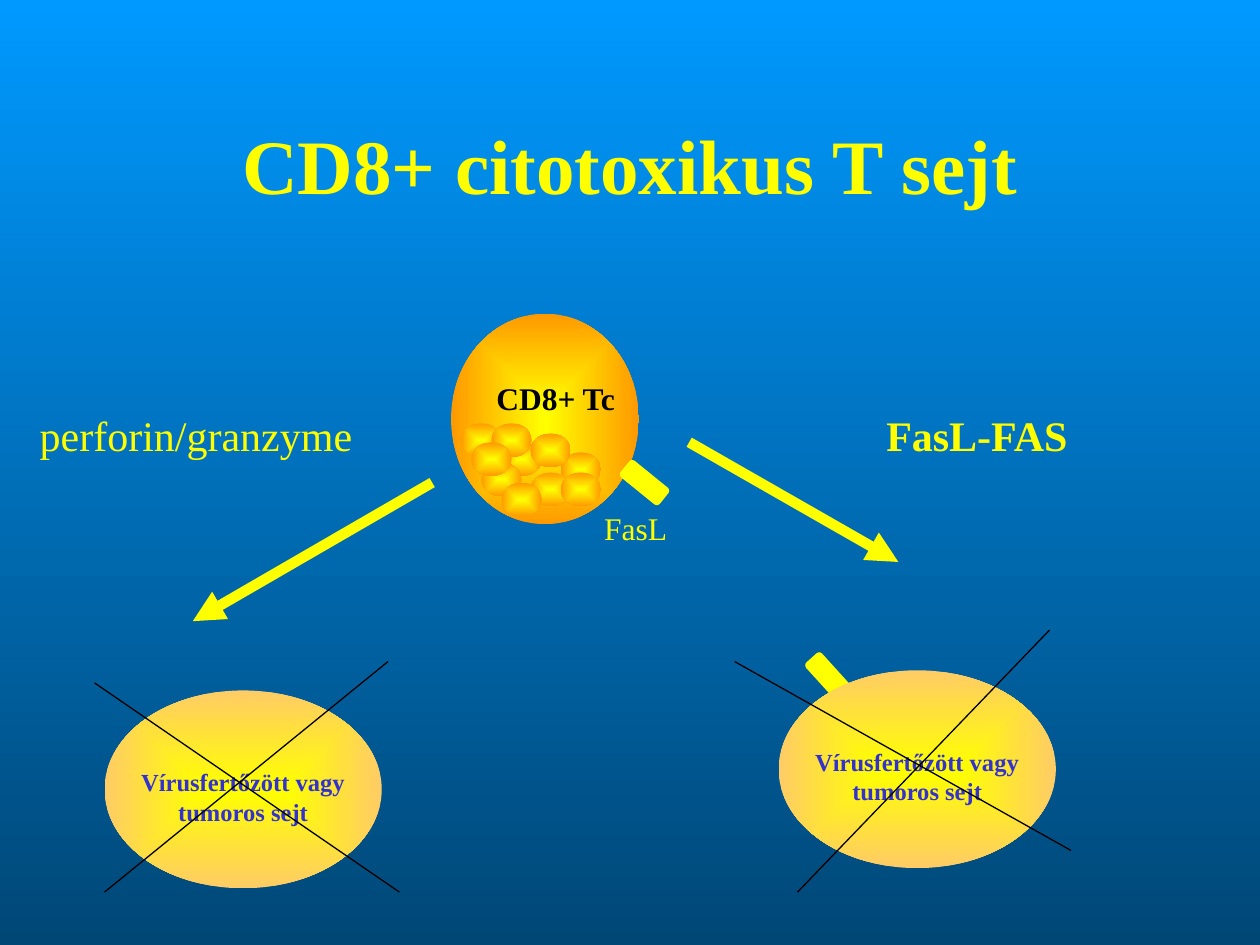
from dataclasses import dataclass

from lxml import etree
from pptx import Presentation
from pptx import util as u
from pptx.dml.color import RGBColor
from pptx.enum import shapes, text
from pptx.oxml.ns import qn

PX = 9144


@dataclass(frozen=True)
class Theme:
    """Holds the colours, font and type sizes of the slide."""
    font: str = "Times New Roman"
    sky: str = "0099FF"
    deep: str = "004776"
    yellow: str = "FFFF00"
    orange: str = "FF9900"
    peach: str = "FFCC66"
    blue: str = "3333CC"
    black: str = "000000"
    title: int = 44
    head: int = 24
    label: int = 18
    small: int = 14
    thin: float = 0.75
    thick: float = 6


def rgb(color):
    """Turn a hex string into a colour."""
    return RGBColor.from_string(color)


def px(*vals):
    """Scale whole px to EMU."""
    return [u.Emu(v * PX) for v in vals]


def blend(fill, *colors):
    """Give a fill a gradient of two colours."""
    fill.gradient()
    for stop, color in zip(fill.gradient_stops, colors):
        stop.color.rgb = rgb(color)


def write(frame, words, *, font, size, color, bold=False, anchor=text.MSO_ANCHOR.TOP):
    """Put one centred, formatted paragraph in a text frame."""
    frame.word_wrap = True
    frame.vertical_anchor = anchor
    para = frame.paragraphs[0]
    para.alignment = text.PP_ALIGN.CENTER
    run = para.add_run()
    run.text = words
    run.font.name = font
    run.font.size = u.Pt(size)
    run.font.bold = bold
    run.font.color.rgb = rgb(color)


class Board:
    """Draws each kind of element on the current slide."""

    def __init__(self, deck, theme):
        """Add a blank slide with a gradient background."""
        self.theme = theme
        self.slide = deck.slides.add_slide(deck.slide_layouts[6])
        fill = self.slide.background.fill
        blend(fill, theme.sky, theme.deep)
        fill.gradient_angle = 270

    def label(self, words, at, size, color, home=None, **form):
        """Add a text box."""
        box = (home or self.slide).shapes.add_textbox(*px(*at))
        write(box.text_frame, words, font=self.theme.font, size=size, color=color, **form)

    def ball(self, at, rim, home=None):
        """Add an ellipse that glows from its centre."""
        ball = (home or self.slide).shapes.add_shape(shapes.MSO_SHAPE.OVAL, *px(*at))
        ball.shadow.inherit = False
        ball.line.fill.background()
        blend(ball.fill, self.theme.yellow, rim)
        grad = ball._element.spPr.find(qn("a:gradFill"))
        grad.remove(grad.find(qn("a:lin")))
        glow = etree.SubElement(grad, qn("a:path"))
        glow.set("path", "shape")
        rect = etree.SubElement(glow, qn("a:fillToRect"))
        for side in "ltrb":
            rect.set(side, "50000")

    def stub(self, left, top, turn):
        """Add a turned receptor bar."""
        bar = self.slide.shapes.add_shape(
            shapes.MSO_SHAPE.ROUNDED_RECTANGLE, *px(left, top, 39, 16))
        bar.adjustments[0] = 0.167
        bar.rotation = turn
        bar.shadow.inherit = False
        bar.fill.solid()
        bar.fill.fore_color.rgb = rgb(self.theme.yellow)
        bar.line.color.rgb = rgb(self.theme.yellow)
        bar.line.width = u.Pt(self.theme.thin)

    def line(self, ends, color, width, head=False):
        """Add a straight line, with an arrowhead if asked."""
        line = self.slide.shapes.add_connector(shapes.MSO_CONNECTOR.STRAIGHT, *px(*ends))
        line.line.color.rgb = rgb(color)
        line.line.width = u.Pt(width)
        if head:
            etree.SubElement(line.line._get_or_add_ln(), qn("a:tailEnd")).set("type", "triangle")
        etree.SubElement(line._element.spPr, qn("a:effectLst"))

    def target(self, left, top):
        """Add a target cell grouped with its label."""
        group = self.slide.shapes.add_group_shape()
        self.ball((left, top, 220, 157), self.theme.peach, home=group)
        self.label("Vírusfertőzött vagy tumoros sejt", (left, top + 56, 220, 57),
                   self.theme.small, self.theme.blue, home=group, bold=True)

    def grains(self, spots):
        """Add granules at the given corners."""
        for left, top in spots:
            self.ball((left, top, 32, 27), self.theme.orange)


def main():
    """Build and save the slide."""
    deck = Presentation()
    deck.slide_width, deck.slide_height = px(1000, 750)
    theme = Theme()
    board = Board(deck, theme)

    board.stub(638, 529, 47.8)
    board.label("CD8+ citotoxikus T sejt", (75, 67, 850, 125), theme.title, theme.yellow,
                bold=True, anchor=text.MSO_ANCHOR.MIDDLE)
    board.ball((358, 249, 149, 167), theme.orange)
    board.label("CD8+ Tc", (374, 296, 134, 40), theme.label, theme.black, bold=True)
    board.target(618, 532)
    board.line((343, 383, 153, 493), theme.yellow, theme.thick, head=True)
    board.grains([(445, 359), (421, 375), (398, 351), (421, 344), (366, 336),
                  (445, 375), (390, 336), (382, 367)])
    board.target(83, 548)
    board.line((547, 351, 713, 446), theme.yellow, theme.thick, head=True)
    board.grains([(398, 383), (374, 351)])
    board.stub(492, 375, 39)
    board.label("perforin/granzyme", (0, 320, 311, 50), theme.head, theme.yellow)
    board.label("FasL-FAS ", (673, 320, 213, 50), theme.head, theme.yellow, bold=True)
    board.label("FasL", (469, 399, 71, 40), theme.label, theme.yellow)
    for ends in ((75, 542, 317, 708), (308, 525, 83, 708),
                 (583, 525, 850, 675), (833, 500, 633, 708)):
        board.line(ends, theme.black, theme.thin)

    deck.save("out.pptx")


if __name__ == "__main__":
    main()
